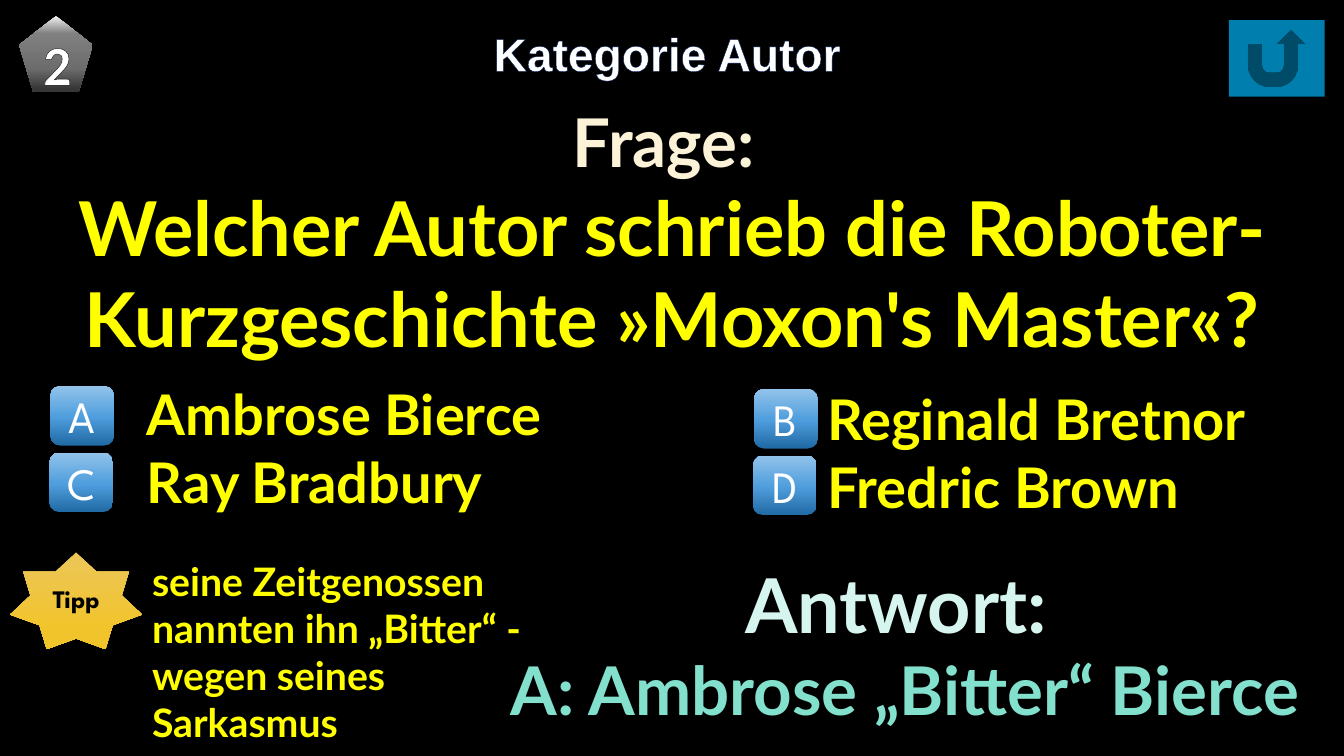
from dataclasses import dataclass

from lxml.etree import SubElement
from pptx import Presentation
from pptx.dml.color import RGBColor
from pptx.enum.shapes import MSO_SHAPE
from pptx.enum.text import MSO_ANCHOR, MSO_AUTO_SIZE, PP_ALIGN
from pptx.oxml.ns import qn
from pptx.util import Pt


@dataclass(frozen=True)
class Theme:
    background: str = "000000"
    white: str = "FFFFFF"
    black: str = "000000"
    yellow: str = "FFFF00"
    question_heading: str = "FBF2D7"
    answer_heading: str = "D5F5EE"
    answer: str = "82E0CD"
    title_outline: str = "002060"
    return_button: str = "00B0F0"
    badge: tuple = ((0, "F2F2F2"), (23, "808080"), (69, "6D6D6D"), (97, "363636"))
    star: tuple = ((0, "EBC659"), (78, "F2C42C"))
    letter: tuple = ((0, "206AA5"), (48, "4F9EDD"), (100, "92C3EA"))
    body_font: str = "Lato"
    label_font: str = "League Spartan"
    title_size: int = 33
    heading_size: int = 48
    large_size: int = 54
    option_size: int = 40
    letter_size: int = 32
    hint_size: int = 28
    label_size: int = 18


THEME = Theme()


def add_xml(parent, tag, **attributes):
    return SubElement(parent, qn(tag), {key: str(value) for key, value in attributes.items()})


def add_color(parent, color, alpha=None):
    rgb = add_xml(parent, "a:srgbClr", val=color)
    if alpha is not None:
        add_xml(rgb, "a:alpha", val=alpha * 1000)


def write(paragraph, text, size, color, font=THEME.body_font, bold=True,
          align=PP_ALIGN.LEFT, outline=None):
    paragraph.alignment = align
    run = paragraph.add_run()
    run.text = text
    run.font.size = Pt(size)
    run.font.name = font
    run.font.bold = bold
    run.font.color.rgb = RGBColor.from_string(color)
    if outline:
        outline_color, width = outline
        line = add_xml(run.font._element, "a:ln", w=int(Pt(width)))
        add_color(add_xml(line, "a:solidFill"), outline_color)
        run.font._element.insert(0, line)


def add_text(slide, box, lines, **text_format):
    frame = slide.shapes.add_textbox(*map(Pt, box)).text_frame
    frame.word_wrap = True
    frame.auto_size = MSO_AUTO_SIZE.SHAPE_TO_FIT_TEXT
    for index, (text, size, color) in enumerate(lines):
        paragraph = frame.add_paragraph() if index else frame.paragraphs[0]
        write(paragraph, text, size, color, **text_format)


def add_figure(slide, preset, box, shadow=False):
    figure = slide.shapes.add_shape(preset, *map(Pt, box))
    figure.shadow.inherit = False
    figure.line.fill.background()
    if shadow:
        effects = figure._element.spPr.find(qn("a:effectLst"))
        outer = add_xml(effects, "a:outerShdw", blurRad=int(Pt(4.5)), dist=int(Pt(1.5)),
                        dir=90 * 60000, algn="ctr", rotWithShape=0)
        add_color(outer, THEME.black, 48)
    return figure


def fill_gradient(figure, stops, angle):
    figure.fill.gradient()
    gradient = figure._element.spPr.find(qn("a:gradFill"))
    for child in list(gradient):
        gradient.remove(child)
    stop_list = add_xml(gradient, "a:gsLst")
    for position, color in stops:
        add_color(add_xml(stop_list, "a:gs", pos=position * 1000), color)
    add_xml(gradient, "a:lin", ang=angle * 60000, scaled=0)


def add_label(slide, preset, box, text, stops, size, color, angle=90, shadow=False,
              **text_format):
    label = add_figure(slide, preset, box, shadow)
    fill_gradient(label, stops, angle)
    label.text_frame.vertical_anchor = MSO_ANCHOR.MIDDLE
    write(label.text_frame.paragraphs[0], text, size, color,
          align=PP_ALIGN.CENTER, **text_format)


def add_return_button(slide, box):
    button = add_figure(slide, MSO_SHAPE.ACTION_BUTTON_RETURN, box, shadow=True)
    button.fill.solid()
    button.fill.fore_color.rgb = RGBColor.from_string(THEME.return_button)
    rgb = button._element.spPr.find(qn("a:solidFill"))[0]
    add_xml(rgb, "a:alpha", val=72000)


def add_options(slide, letter_left, letter_top, names_box, options):
    lines = [(name, THEME.option_size, THEME.yellow) for _, name in options]
    add_text(slide, names_box, lines)
    for row, (letter, _) in enumerate(options):
        box = (letter_left - 0.7 * row, letter_top + 47.5 * row, 45.4, 42.5)
        add_label(slide, MSO_SHAPE.ROUNDED_RECTANGLE, box, letter, THEME.letter,
                  THEME.letter_size, THEME.white, angle=270,
                  font=THEME.label_font, bold=False)


def main():
    deck = Presentation()
    deck.slide_width, deck.slide_height = Pt(960), Pt(540)
    slide = deck.slides.add_slide(deck.slide_layouts[6])
    slide.background.fill.solid()
    slide.background.fill.fore_color.rgb = RGBColor.from_string(THEME.background)

    add_text(slide, (19.4, 14.4, 914.4, 47.5),
             [("Kategorie Autor", THEME.title_size, THEME.white)],
             font="Arial", align=PP_ALIGN.CENTER, outline=(THEME.title_outline, 0.52))
    add_text(slide, (0, 68.4, 960, 196.6),
             [("Frage: ", THEME.heading_size, THEME.question_heading),
              ("Welcher Autor schrieb die Roboter-Kurzgeschichte »Moxon's Master«?",
               THEME.large_size, THEME.yellow)],
             align=PP_ALIGN.CENTER)
    add_text(slide, (326.9, 394.6, 639.4, 131),
             [("Antwort: ", THEME.large_size, THEME.answer_heading),
              ("A: Ambrose „Bitter“ Bierce", THEME.heading_size, THEME.answer)],
             align=PP_ALIGN.CENTER)
    add_return_button(slide, (877.7, 14.4, 68.4, 54.7))
    add_label(slide, MSO_SHAPE.REGULAR_PENTAGON, (13.7, 11.5, 52.6, 54), "2",
              THEME.badge, THEME.option_size, THEME.white,
              font="Calibri", outline=(THEME.black, 1.06))

    add_text(slide, (101.5, 394.6, 281.5, 143.3),
             [("seine Zeitgenossen nannten ihn „Bitter“ - wegen seines Sarkasmus",
               THEME.hint_size, THEME.yellow)])
    add_label(slide, MSO_SHAPE.STAR_7_POINT, (7.2, 394.6, 94.3, 69.1), "Tipp",
              THEME.star, THEME.label_size, THEME.black, shadow=True,
              font=THEME.label_font)

    add_options(slide, 36, 275.8, (97.9, 267.8, 353.5, 104.4),
                [("A", "Ambrose Bierce"), ("C", "Ray Bradbury")])
    add_options(slide, 538.6, 277.9, (583.9, 271.4, 375.8, 104.4),
                [("B", "Reginald Bretnor"), ("D", "Fredric Brown")])
    deck.save("out.pptx")


if __name__ == "__main__":
    main()
